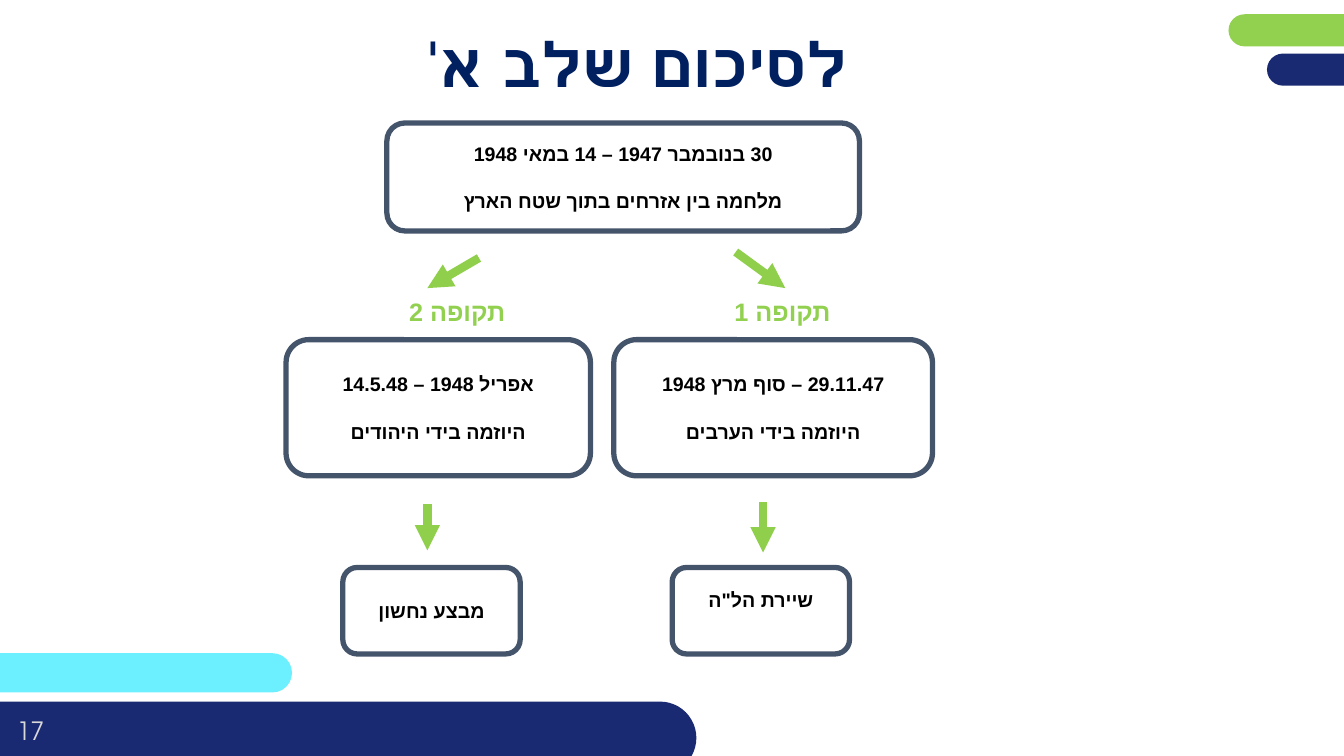
from dataclasses import dataclass

from lxml.etree import SubElement
from pptx import Presentation
from pptx.dml.color import RGBColor
from pptx.enum.shapes import MSO_CONNECTOR, MSO_SHAPE
from pptx.enum.text import MSO_ANCHOR, PP_ALIGN
from pptx.oxml.ns import qn
from pptx.util import Cm, Pt

COLORS = {
    "navy": "192A72", "lime": "92D050", "aqua": "6CF0FF", "white": "FFFFFF",
    "title": "002060", "border": "44546A", "arrow": "8FCF4B",
    "ink": "000000", "number": "D9D9D9",
}
DISPLAY_FONT = "TeX Gyre Adventor"
HEBREW_FONT = "Arial"


@dataclass(frozen=True)
class Area:
    """A rectangle in centimetres."""
    left: float
    top: float
    width: float
    height: float

    def lengths(self) -> list:
        """Return the four lengths for a new shape."""
        return [Cm(v) for v in (self.left, self.top, self.width, self.height)]


@dataclass(frozen=True)
class Style:
    """Font and paragraph format of a text."""
    size: int
    color: str
    latin: str = DISPLAY_FONT
    hebrew: str = HEBREW_FONT
    bold: bool = True
    rtl: bool = True
    align: PP_ALIGN = PP_ALIGN.CENTER
    gap: int = 0


@dataclass(frozen=True)
class Bar:
    """A rounded decorative bar."""
    area: Area
    color: str


@dataclass(frozen=True)
class Stage:
    """A bordered box of the diagram."""
    area: Area
    lines: tuple
    outline: MSO_SHAPE = MSO_SHAPE.ROUNDED_RECTANGLE
    bottom: float = 0.13


@dataclass(frozen=True)
class Label:
    """A plain text with its place and style."""
    area: Area
    text: str
    style: Style
    anchor: MSO_ANCHOR = MSO_ANCHOR.TOP


@dataclass(frozen=True)
class Arrow:
    """An arrow between two points in centimetres."""
    start: tuple
    end: tuple


TITLE_STYLE = Style(44, "title", hebrew=DISPLAY_FONT)
STAGE_STYLE = Style(14, "ink", gap=17)
PERIOD_STYLE = Style(18, "lime", latin=HEBREW_FONT, align=PP_ALIGN.RIGHT)
NUMBER_STYLE = Style(18, "number", bold=False, rtl=False)

BARS = (
    Bar(Area(31.93, 1.35, 4.37, 0.81), "navy"),
    Bar(Area(30.96, 0.36, 5.23, 0.81), "lime"),
    Bar(Area(-1.35, 16.46, 8.71, 0.99), "aqua"),
    Bar(Area(-2.72, 17.68, 20.27, 1.83), "navy"),
)
EVENT = MSO_SHAPE.FLOWCHART_ALTERNATE_PROCESS
STAGES = (
    Stage(Area(16.94, 14.3, 4.47, 2.18), ("שיירת הל\"ה",), EVENT, 0.69),
    Stage(Area(8.64, 14.3, 4.47, 2.18), ("מבצע נחשון",), EVENT),
    Stage(Area(9.75, 3.1, 11.91, 2.72),
          ("30 בנובמבר 1947 – 14 במאי 1948", "מלחמה בין אזרחים בתוך שטח הארץ")),
    Stage(Area(15.47, 8.56, 8.03, 3.43),
          ("29.11.47 – סוף מרץ 1948", "היוזמה בידי הערבים")),
    Stage(Area(7.21, 8.56, 7.67, 3.43),
          ("אפריל 1948 – 14.5.48", "היוזמה בידי היהודים")),
)
LABELS = (
    Label(Area(-0.36, 17.68, 2.26, 1.45), "17", NUMBER_STYLE, MSO_ANCHOR.MIDDLE),
    Label(Area(17.75, 7.34, 3.43, 1.02), "תקופה 1", PERIOD_STYLE),
    Label(Area(9.09, 7.34, 3.89, 1.02), "תקופה 2", PERIOD_STYLE),
)
ARROWS = (
    Arrow((18.54, 6.35), (19.79, 7.26)),
    Arrow((12.07, 6.5), (10.77, 7.26)),
    Arrow((19.23, 12.65), (19.23, 13.92)),
    Arrow((10.77, 12.7), (10.77, 13.87)),
)


def rgb(name: str) -> RGBColor:
    """Return a named colour."""
    return RGBColor.from_string(COLORS[name])


def apply_format(target, values: dict) -> None:
    """Set every attribute in the dict on the target."""
    for attribute, value in values.items():
        setattr(target, attribute, value)


def write_lines(frame, lines: tuple, style: Style, frame_format: dict) -> None:
    """Fill a text frame with one paragraph per line."""
    apply_format(frame, {"word_wrap": True, **frame_format})
    for index, line in enumerate(lines):
        paragraph = frame.add_paragraph() if index else frame.paragraphs[0]
        paragraph.alignment = style.align
        if index:
            paragraph.space_before = Pt(style.gap)
        if style.rtl:
            paragraph._p.get_or_add_pPr().set("rtl", "1")
        run = paragraph.add_run()
        run.text = line
        apply_format(run.font, {"size": Pt(style.size), "bold": style.bold,
                                "name": style.latin})
        run.font.color.rgb = rgb(style.color)
        SubElement(run._r.get_or_add_rPr(), qn("a:cs"), typeface=style.hebrew)


def draw_title(slide, area: Area, text: str) -> None:
    """Place and fill the title placeholder."""
    title = slide.shapes.title
    apply_format(title, dict(zip(("left", "top", "width", "height"), area.lengths())))
    margins = dict.fromkeys(
        ("margin_left", "margin_top", "margin_right", "margin_bottom"), 0)
    write_lines(title.text_frame, (text,), TITLE_STYLE,
                {"vertical_anchor": MSO_ANCHOR.MIDDLE, **margins})


def draw_bar(slide, bar: Bar) -> None:
    """Draw a decorative bar with fully rounded ends."""
    strip = slide.shapes.add_shape(MSO_SHAPE.ROUNDED_RECTANGLE, *bar.area.lengths())
    strip.adjustments[0] = 0.5
    strip.shadow.inherit = False
    strip.fill.solid()
    strip.fill.fore_color.rgb = rgb(bar.color)
    strip.line.fill.background()


def draw_stage(slide, stage: Stage) -> None:
    """Draw a bordered box with its lines."""
    box = slide.shapes.add_shape(stage.outline, *stage.area.lengths())
    box.shadow.inherit = False
    box.fill.solid()
    box.fill.fore_color.rgb = rgb("white")
    box.line.color.rgb = rgb("border")
    box.line.width = Pt(3.78)
    write_lines(box.text_frame, stage.lines, STAGE_STYLE,
                {"vertical_anchor": MSO_ANCHOR.MIDDLE,
                 "margin_bottom": Cm(stage.bottom)})


def draw_label(slide, label: Label) -> None:
    """Draw a plain text."""
    caption = slide.shapes.add_textbox(*label.area.lengths())
    write_lines(caption.text_frame, (label.text,), label.style,
                {"vertical_anchor": label.anchor})


def draw_arrow(slide, arrow: Arrow) -> None:
    """Draw a thick arrow with a triangular head."""
    ends = [Cm(v) for v in (*arrow.start, *arrow.end)]
    link = slide.shapes.add_connector(MSO_CONNECTOR.STRAIGHT, *ends)
    link.line.color.rgb = rgb("arrow")
    link.line.width = Pt(6)
    SubElement(link.line._get_or_add_ln(), qn("a:tailEnd"), type="triangle")
    SubElement(link._element.spPr, qn("a:effectLst"))


def main() -> None:
    """Build the slide and save it."""
    deck = Presentation()
    apply_format(deck, {"slide_width": Cm(33.87), "slide_height": Cm(19.05)})
    slide = deck.slides.add_slide(deck.slide_layouts[5])
    draw_title(slide, Area(9.75, 0.58, 12.62, 2.01), "לסיכום שלב א'")
    for draw, parts in ((draw_bar, BARS), (draw_stage, STAGES),
                        (draw_label, LABELS), (draw_arrow, ARROWS)):
        for part in parts:
            draw(slide, part)
    deck.save("out.pptx")


if __name__ == "__main__":
    main()
